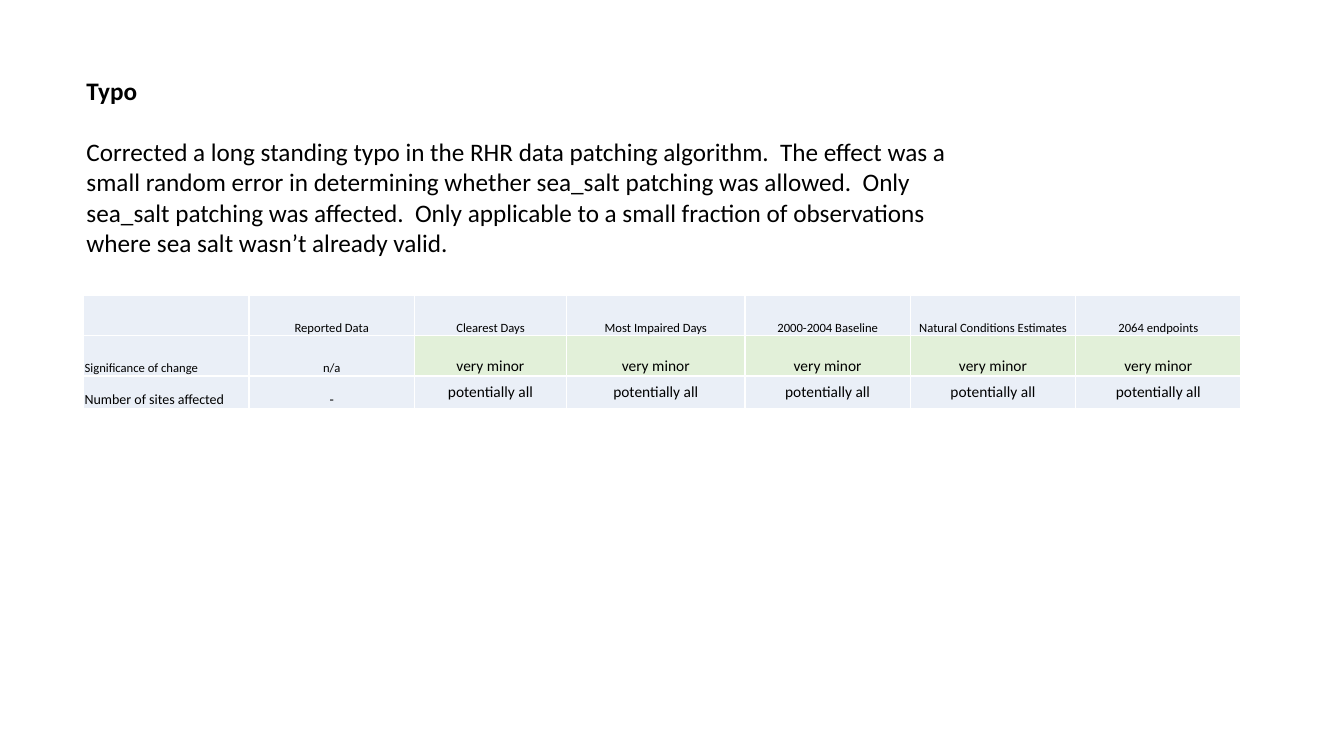
from lxml.etree import SubElement
from pptx import Presentation
from pptx.dml.color import RGBColor
from pptx.enum.text import MSO_ANCHOR, PP_ALIGN
from pptx.oxml.ns import qn
from pptx.util import Inches, Pt

BLACK = RGBColor(0x00, 0x00, 0x00)
WHITE = RGBColor(0xFF, 0xFF, 0xFF)
PALE_BLUE = RGBColor(0xEA, 0xEF, 0xF7)
PALE_GREEN = RGBColor(0xE2, 0xF0, 0xD9)

SLIDE_WIDTH, SLIDE_HEIGHT = 13.33, 7.5
COLUMN_WIDTHS = [1.64, 1.64, 1.51, 1.77, 1.64, 1.64, 1.64]
ROW_HEIGHTS = [0.4, 0.4, 0.32]
FIRST_EFFECT_COLUMN = 2
EFFECT_COLUMNS = len(COLUMN_WIDTHS) - FIRST_EFFECT_COLUMN

EXPLANATION = (
    "Corrected a long standing typo in the RHR data patching algorithm.  "
    "The effect was a small random error in determining whether sea_salt "
    "patching was allowed.  Only sea_salt patching was affected.  Only "
    "applicable to a small fraction of observations where sea salt wasn’t "
    "already valid."
)
HEADINGS = ["", "Reported Data", "Clearest Days", "Most Impaired Days",
            "2000-2004 Baseline", "Natural Conditions Estimates", "2064 endpoints"]
SIGNIFICANCE = ["Significance of change", "n/a"] + ["very minor"] * EFFECT_COLUMNS
SITES = ["Number of sites affected", "-"] + ["potentially all"] * EFFECT_COLUMNS

# Each row: texts, label size, effect size, effect fill, effect anchor
IMPACT_ROWS = [
    (HEADINGS, 9, 9, PALE_BLUE, MSO_ANCHOR.BOTTOM),
    (SIGNIFICANCE, 9, 11, PALE_GREEN, MSO_ANCHOR.BOTTOM),
    (SITES, 10, 11, PALE_BLUE, MSO_ANCHOR.MIDDLE),
]


def write(paragraph, text, size, bold=False, align=PP_ALIGN.LEFT, space_before=None):
    paragraph.alignment = align
    if space_before is not None:
        paragraph.space_before = Pt(space_before)
    font = paragraph.font
    font.size = Pt(size)
    if text:
        run = paragraph.add_run()
        run.text = text
        font = run.font
    font.name = "Calibri"
    font.size = Pt(size)
    font.bold = bold
    font.color.rgb = BLACK


def add_borders(cell, color, width):
    """Draw a line on all four sides; call before filling the cell."""
    properties = cell._tc.get_or_add_tcPr()
    for side in ("a:lnL", "a:lnR", "a:lnT", "a:lnB"):
        line = SubElement(properties, qn(side), w=str(Pt(width)))
        fill = SubElement(line, qn("a:solidFill"))
        SubElement(fill, qn("a:srgbClr"), val=str(color))


def style_cell(cell, fill, anchor):
    cell.margin_left = cell.margin_right = cell.margin_top = Inches(0.01)
    cell.margin_bottom = 0
    cell.vertical_anchor = anchor
    add_borders(cell, WHITE, 1)
    cell.fill.solid()
    cell.fill.fore_color.rgb = fill


def add_explanation(slide, left, top, width, height):
    box = slide.shapes.add_textbox(
        Inches(left), Inches(top), Inches(width), Inches(height))
    frame = box.text_frame
    frame.word_wrap = True
    write(frame.paragraphs[0], "Typo", 18, bold=True)
    write(frame.add_paragraph(), EXPLANATION, 18, space_before=22)


def add_impact_table(slide, left, top):
    table = slide.shapes.add_table(
        len(ROW_HEIGHTS), len(COLUMN_WIDTHS), Inches(left), Inches(top),
        Inches(sum(COLUMN_WIDTHS)), Inches(sum(ROW_HEIGHTS))).table
    table.first_row = table.horz_banding = False
    for column, width in zip(table.columns, COLUMN_WIDTHS):
        column.width = Inches(width)
    for row, height in zip(table.rows, ROW_HEIGHTS):
        row.height = Inches(height)

    for row, (texts, label_size, effect_size, effect_fill, effect_anchor) in zip(
            table.rows, IMPACT_ROWS):
        for index, (cell, text) in enumerate(zip(row.cells, texts)):
            is_effect = index >= FIRST_EFFECT_COLUMN
            style_cell(cell,
                       effect_fill if is_effect else PALE_BLUE,
                       effect_anchor if is_effect else MSO_ANCHOR.BOTTOM)
            write(cell.text_frame.paragraphs[0], text,
                  effect_size if is_effect else label_size,
                  align=PP_ALIGN.CENTER if index else PP_ALIGN.LEFT)


def main():
    deck = Presentation()
    deck.slide_width = Inches(SLIDE_WIDTH)
    deck.slide_height = Inches(SLIDE_HEIGHT)
    slide = deck.slides.add_slide(deck.slide_layouts[6])
    add_explanation(slide, 0.76, 0.7, SLIDE_WIDTH * 0.666, SLIDE_HEIGHT * 0.256)
    add_impact_table(slide, 0.83, 2.93)
    deck.save("out.pptx")


if __name__ == "__main__":
    main()
